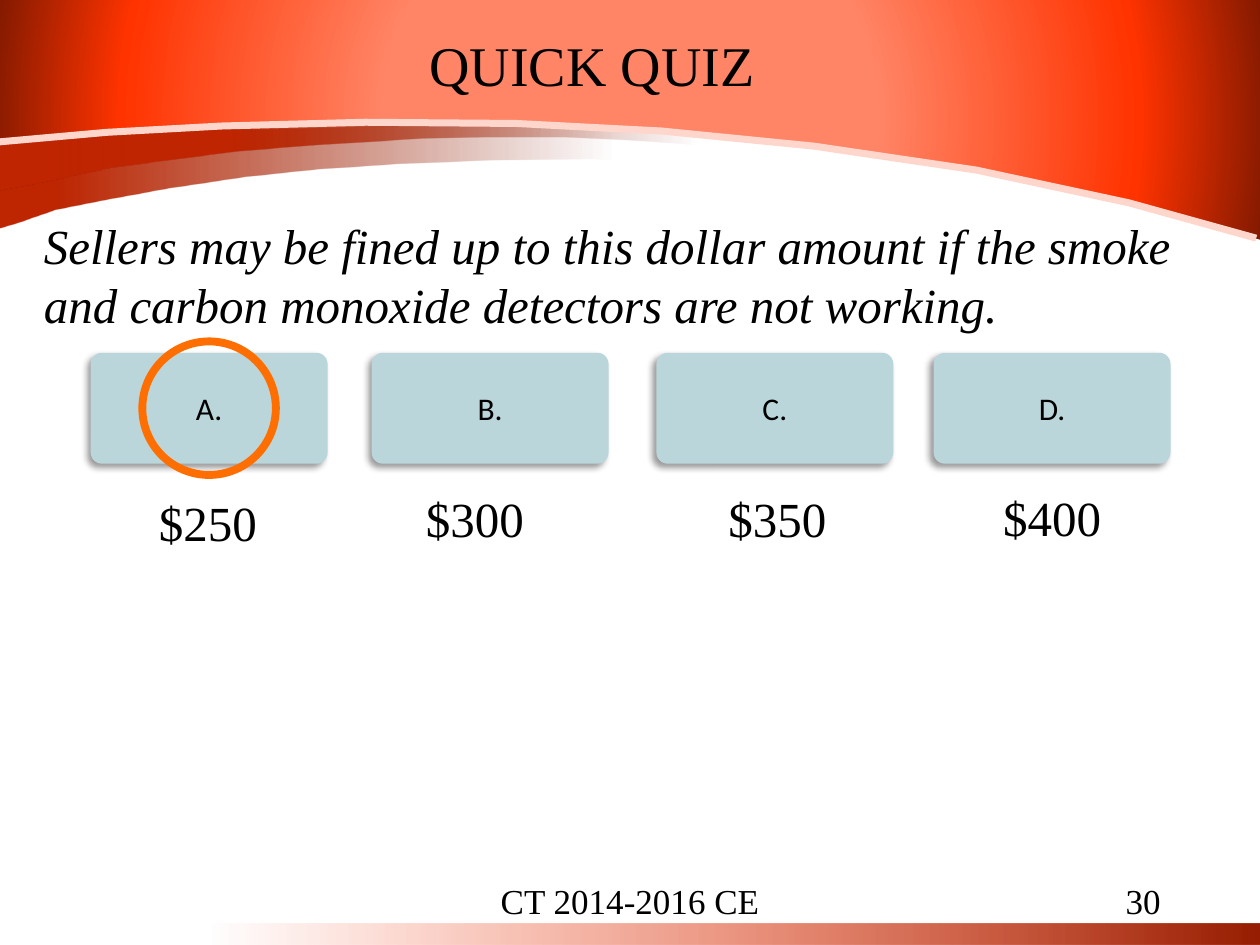
import pptx
import pptx.dml.color
import pptx.enum.shapes
import pptx.enum.text
import pptx.oxml
import pptx.oxml.ns
import pptx.util

Inches = pptx.util.Inches
Pt = pptx.util.Pt
RGB = pptx.dml.color.RGBColor.from_string
SHAPE = pptx.enum.shapes.MSO_SHAPE
ALIGN = pptx.enum.text.PP_ALIGN
ANCHOR = pptx.enum.text.MSO_ANCHOR
DRAWING_NS = pptx.oxml.ns.nsdecls("a")

COLORS = {
    "text": "000000",
    "card": "BBD6DB",
    "ring": "FF6E01",
    "rim": "FFD6CC",
    "salmon": "FF8566",
    "red": "FF3300",
    "mid_red": "D72B00",
    "brick": "BF2600",
    "rust": "971E00",
    "maroon": "801900",
}
SERIF = "Times New Roman"


def fill_gradient(shape, stops, direction):
    """Fill without outline; stops are (position %, colour name, opacity %)."""
    shape.shadow.inherit = False
    shape.line.fill.background()
    shape.fill.background()
    stop_xml = "".join(
        f'<a:gs pos="{position * 1000}"><a:srgbClr val="{COLORS[color]}">'
        f'<a:alpha val="{opacity * 1000}"/></a:srgbClr></a:gs>'
        for position, color, opacity in stops
    )
    gradient = pptx.oxml.parse_xml(
        f'<a:gradFill {DRAWING_NS} rotWithShape="1"><a:gsLst>{stop_xml}</a:gsLst>{direction}</a:gradFill>'
    )
    properties = shape._element.spPr
    properties.replace(properties.find(pptx.oxml.ns.qn("a:noFill")), gradient)


def write(shape, text, align, anchor, **font_format):
    frame = shape.text_frame
    frame.word_wrap = True
    frame.vertical_anchor = anchor
    paragraph = frame.paragraphs[0]
    paragraph.alignment = align
    run = paragraph.add_run()
    run.text = text
    for attribute, value in font_format.items():
        setattr(run.font, attribute, value)
    run.font.color.rgb = RGB(COLORS["text"])


deck = pptx.Presentation()
deck.slide_width, deck.slide_height = Inches(10), Inches(7.5)
slide = deck.slides.add_slide(deck.slide_layouts[6])
shapes = slide.shapes

# Footer band
footer_band = shapes.add_shape(SHAPE.RECTANGLE, Inches(1.67), Inches(7.33), Inches(8.33), Inches(0.17))
fill_gradient(
    footer_band,
    [(0, "rust", 100), (50, "mid_red", 50), (100, "red", 0)],
    '<a:lin ang="10800000" scaled="0"/>',
)

# Header: two fading swooshes, the main arch and its pale rim
ACROSS = '<a:lin ang="0" scaled="0"/>'
FROM_CENTRE = '<a:path path="circle"><a:fillToRect l="50000" t="50000" r="50000" b="50000"/></a:path>'
lower_swoosh = [
    (-0.02, 1.81), (0.15, 1.76), (0.44, 1.66), (0.79, 1.59), (1.34, 1.49), (1.95, 1.4),
    (2.53, 1.34), (3.15, 1.3), (3.9, 1.27), (4.71, 1.26), (5.07, 1.28), (5.07, 0.94), (-0.03, 1.09),
]
upper_swoosh = [
    (-0.02, 1.51), (0.35, 1.44), (0.88, 1.33), (1.26, 1.28), (1.89, 1.2), (2.53, 1.15),
    (3.36, 1.1), (3.84, 1.09), (4.48, 1.09), (5.1, 1.12), (5.5, 1.15), (5.54, 0.97),
    (4.53, 0.84), (-0.02, 0.91),
]
arch = [
    (-0.02, 1.12), (0.63, 1.07), (1.28, 1.02), (2.09, 0.98), (2.84, 0.97), (3.51, 0.97),
    (4.37, 0.99), (5.14, 1.03), (6.1, 1.12), (6.99, 1.24), (7.82, 1.38), (8.55, 1.52),
    (9.1, 1.65), (9.72, 1.81), (10.03, 1.91), (10.01, 0), (-0.03, -0.01),
]
rim = [
    (-0.05, 1.13), (0.85, 1.05), (1.76, 1), (2.9, 0.97), (4.1, 0.98), (5.25, 1.04),
    (6.46, 1.16), (7.75, 1.35), (8.96, 1.61), (9.97, 1.89),
]
for outline, stops, direction in [
    (lower_swoosh, [(9, "brick", 100), (96, "maroon", 0)], ACROSS),
    (upper_swoosh, [(33, "brick", 100), (100, "maroon", 0)], ACROSS),
    (arch, [(38, "salmon", 100), (79, "red", 100), (100, "maroon", 100)], FROM_CENTRE),
    (rim, None, None),
]:
    points = [(Inches(x), Inches(y)) for x, y in outline]
    builder = shapes.build_freeform(*points[0])
    builder.add_line_segments(points[1:], close=stops is not None)
    curve = builder.convert_to_shape()
    if stops:
        fill_gradient(curve, stops, direction)
    else:
        curve.shadow.inherit = False
        curve.fill.background()
        curve.line.color.rgb = RGB(COLORS["rim"])
        curve.line.width = Pt(4)

# Answer cards
card_lefts = [0.72, 2.95, 5.21, 7.41]
for letter, left in zip("ABCD", card_lefts):
    card = shapes.add_shape(SHAPE.ROUNDED_RECTANGLE, Inches(left), Inches(2.8), Inches(1.88), Inches(0.88))
    card.adjustments[0] = 0.1
    card.fill.solid()
    card.fill.fore_color.rgb = RGB(COLORS["card"])
    card.line.fill.background()
    card.shadow.inherit = False
    card._element.spPr.find(pptx.oxml.ns.qn("a:effectLst")).append(pptx.oxml.parse_xml(
        f'<a:outerShdw {DRAWING_NS} blurRad="{Pt(4)}" dist="{Pt(3)}" dir="8100000" rotWithShape="0">'
        f'<a:srgbClr val="{COLORS["text"]}"><a:alpha val="40000"/></a:srgbClr></a:outerShdw>'
    ))
    write(card, f"{letter}.", ALIGN.CENTER, ANCHOR.MIDDLE, name="Calibri", size=Pt(18))

# Ring around the right answer
answer_ring = shapes.add_shape(SHAPE.OVAL, Inches(1.13), Inches(2.71), Inches(1.06), Inches(1.06))
answer_ring.shadow.inherit = False
answer_ring.fill.background()
answer_ring.line.color.rgb = RGB(COLORS["ring"])
answer_ring.line.width = Pt(4.5)

# Amounts; the second sits a little left of its card's centre
for amount, left, top, right_inset in [
    ("$250", 0.71, 3.86, 0.1),
    ("$300", 2.95, 3.83, 0.34),
    ("$350", 5.23, 3.83, 0.1),
    ("$400", 7.41, 3.82, 0.1),
]:
    amount_box = shapes.add_textbox(Inches(left), Inches(top), Inches(1.88), Inches(1.38))
    amount_box.text_frame.margin_right = Inches(right_inset)
    write(amount_box, amount, ALIGN.CENTER, ANCHOR.TOP, name=SERIF, size=Pt(28))

# Question, footer, slide number and title
question = "Sellers may be fined up to this dollar amount if the smoke and carbon monoxide detectors are not working."
for text, box, align, anchor, size, italic in [
    (question, (0.25, 1.66, 9.42, 1.04), ALIGN.LEFT, ANCHOR.TOP, 28, True),
    ("CT 2014-2016 CE", (3.31, 6.95, 3.38, 0.4), ALIGN.CENTER, ANCHOR.MIDDLE, 20, False),
    ("30", (7.06, 6.95, 2.25, 0.4), ALIGN.RIGHT, ANCHOR.MIDDLE, 20, False),
    ("QUICK QUIZ", (3.31, 0.19, 2.93, 0.64), ALIGN.LEFT, ANCHOR.TOP, 32, False),
]:
    text_box = shapes.add_textbox(*map(Inches, box))
    write(text_box, text, align, anchor, name=SERIF, size=Pt(size), italic=italic)

deck.save("out.pptx")
